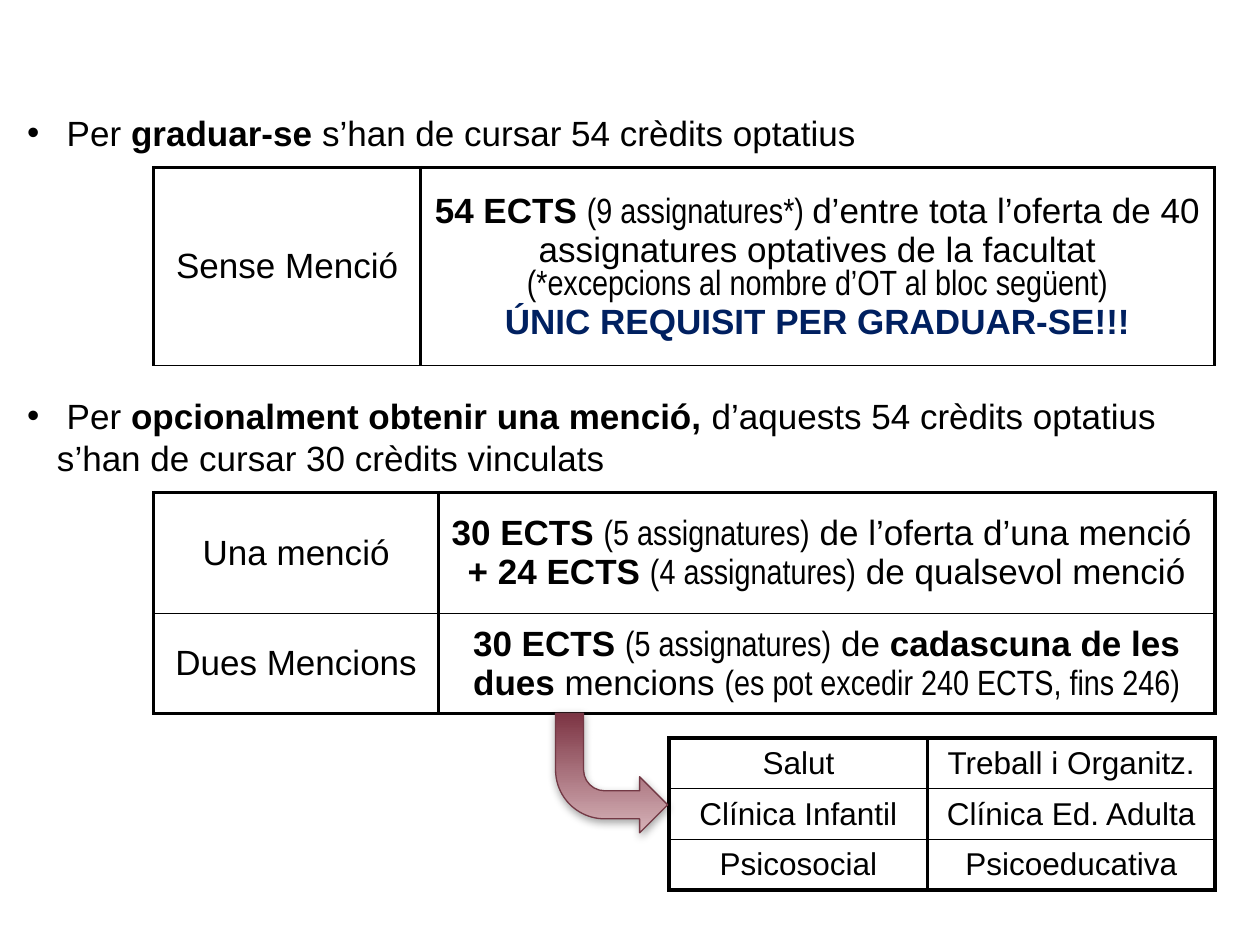
from lxml.etree import SubElement
from pptx import Presentation
from pptx.dml.color import RGBColor
from pptx.enum.shapes import MSO_SHAPE as Shape
from pptx.enum.text import MSO_ANCHOR as Anchor, PP_ALIGN as Align
from pptx.oxml.ns import qn
from pptx.util import Cm, Pt

COLORS = {"ink": "000000", "navy": "002060", "rose": "D6B2B8",
          "wine": "7C3443", "edge": "733945"}
FORMATS = {
    "plain": {"name": "Arial", "bold": False},
    "bold": {"name": "Arial", "bold": True},
    "narrow": {"name": "Arial Narrow", "bold": False},
    "alert": {"name": "Arial", "bold": True},
}
THICK, THIN = 2.25, 1

GRADUATE = [(" Per ", "plain"), ("graduar-se", "bold"),
            (" s’han de cursar 54 crèdits optatius", "plain")]
MENTION = [(" Per ", "plain"), ("opcionalment obtenir una menció, ", "bold"),
           ("d’aquests 54 crèdits optatius s’han de cursar 30 crèdits vinculats", "plain")]
NO_MENTION_ROWS = [[
    [[("Sense Menció", "plain")]],
    [[("54 ECTS ", "bold"), ("(9 assignatures*) ", "narrow"),
      ("d’entre tota l’oferta de 40 assignatures optatives de la facultat", "plain")],
     [("(*excepcions al nombre d’OT al bloc següent)", "narrow")],
     [("ÚNIC REQUISIT PER GRADUAR-SE!!!", "alert")]],
]]
MENTION_ROWS = [
    [[[("Una menció", "plain")]],
     [[("30 ECTS ", "bold"), ("(5 assignatures)", "narrow"),
       (" de l’oferta d’una menció ", "plain")],
      [("+ 24 ECTS ", "bold"), ("(4 assignatures)", "narrow"),
       (" de qualsevol menció", "plain")]]],
    [[[("Dues Mencions", "plain")]],
     [[("30 ECTS ", "bold"), ("(5 assignatures)", "narrow"), (" de ", "plain"),
       ("cadascuna de les dues", "bold"), (" mencions ", "plain"),
       ("(es pot excedir 240 ECTS, fins 246)", "narrow")]]],
]
MENTION_NAMES = [("Salut", "Treball i Organitz."),
                 ("Clínica Infantil", "Clínica Ed. Adulta"),
                 ("Psicosocial", "Psicoeducativa")]


def rgb(name):
    """Return the named colour."""
    return RGBColor.from_string(COLORS[name])


def write_spans(para, spans, size):
    """Add the styled spans to a paragraph."""
    for text, style in spans:
        span = para.add_run()
        span.text = text
        for key, value in {**FORMATS[style], "size": Pt(size)}.items():
            setattr(span.font, key, value)
        span.font.color.rgb = rgb("navy" if style == "alert" else "ink")


def add_bullet(page, left, top, width, height, spans):
    """Place one bulleted statement."""
    box = page.shapes.add_textbox(Cm(left), Cm(top), Cm(width), Cm(height))
    box.text_frame.word_wrap = True
    para = box.text_frame.paragraphs[0]
    props = para._p.get_or_add_pPr()
    props.set("marL", str(Cm(0.6)))
    props.set("indent", str(-Cm(0.6)))
    SubElement(props, qn("a:buFont"), typeface="Arial")
    SubElement(props, qn("a:buChar"), char="•")
    para.space_after = Pt(4)
    write_spans(para, spans, 20)


def draw_borders(cell, top, bottom):
    """Outline a cell with thick sides and the given top and bottom widths."""
    props = cell._tc.get_or_add_tcPr()
    for side, width in {"L": THICK, "R": THICK, "T": top, "B": bottom}.items():
        line = SubElement(props, qn(f"a:ln{side}"), w=str(Pt(width)))
        fill = SubElement(line, qn("a:solidFill"))
        SubElement(fill, qn("a:srgbClr"), val=COLORS["ink"])


def add_grid(page, left, top, widths, heights, rows, size=20, bottom=THICK):
    """Place a bordered table of centred cells."""
    table = page.shapes.add_table(len(rows), len(widths), Cm(left), Cm(top),
                                  Cm(sum(widths)), Cm(sum(heights))).table
    table.first_row = table.horz_banding = False
    for column, width in zip(table.columns, widths):
        column.width = Cm(width)
    for r, (row, height) in enumerate(zip(rows, heights)):
        table.rows[r].height = Cm(height)
        for c, paragraphs in enumerate(row):
            cell = table.cell(r, c)
            cell.vertical_anchor = Anchor.MIDDLE
            draw_borders(cell, THIN if r else THICK,
                         bottom if r == len(rows) - 1 else THIN)
            cell.fill.background()
            frame = cell.text_frame
            for i, spans in enumerate(paragraphs):
                para = frame.add_paragraph() if i else frame.paragraphs[0]
                para.alignment = Align.CENTER
                write_spans(para, spans, size)


def add_turn_arrow(page, left, top, width, height):
    """Place the shaded arrow that turns from down to right."""
    arrow = page.shapes.add_shape(Shape.BENT_ARROW, Cm(left), Cm(top),
                                  Cm(width), Cm(height))
    props = arrow._element.spPr
    props.find(qn("a:xfrm")).set("flipV", "1")
    arrow.fill.gradient()
    arrow.fill.gradient_angle = 270
    for stop, name, place in zip(arrow.fill.gradient_stops, ("rose", "wine"), (0, 1)):
        stop.color.rgb = rgb(name)
        stop.position = place
    arrow.line.color.rgb = rgb("edge")
    arrow.line.width = Pt(0.75)
    arrow.shadow.inherit = False
    shadow = SubElement(props.find(qn("a:effectLst")), qn("a:outerShdw"),
                        blurRad=str(Pt(5)), dist=str(Pt(1.8)), dir="5400000",
                        rotWithShape="0")
    color = SubElement(shadow, qn("a:srgbClr"), val=COLORS["ink"])
    SubElement(color, qn("a:alpha"), val="35000")


def main():
    """Build and save the slide."""
    deck = Presentation()
    deck.slide_width, deck.slide_height = Cm(25.4), Cm(19.05)
    page = deck.slides.add_slide(deck.slide_layouts[6])
    add_grid(page, 3.1, 9.93, (5.74, 15.65), (2.44, 2.01), MENTION_ROWS)
    add_bullet(page, 0.3, 7.82, 25.1, 1.96, MENTION)
    add_grid(page, 3.1, 3.38, (5.38, 16), (3.99,), NO_MENTION_ROWS, bottom=THIN)
    names = [[[[(name, "plain")]] for name in row] for row in MENTION_NAMES]
    add_grid(page, 13.49, 14.88, (5.21, 5.79), (1.02,) * 3, names, size=18)
    add_turn_arrow(page, 11.2, 14.38, 2.26, 2.41)
    add_bullet(page, 0.3, 2.13, 24.41, 1.12, GRADUATE)
    deck.save("out.pptx")


if __name__ == "__main__":
    main()
